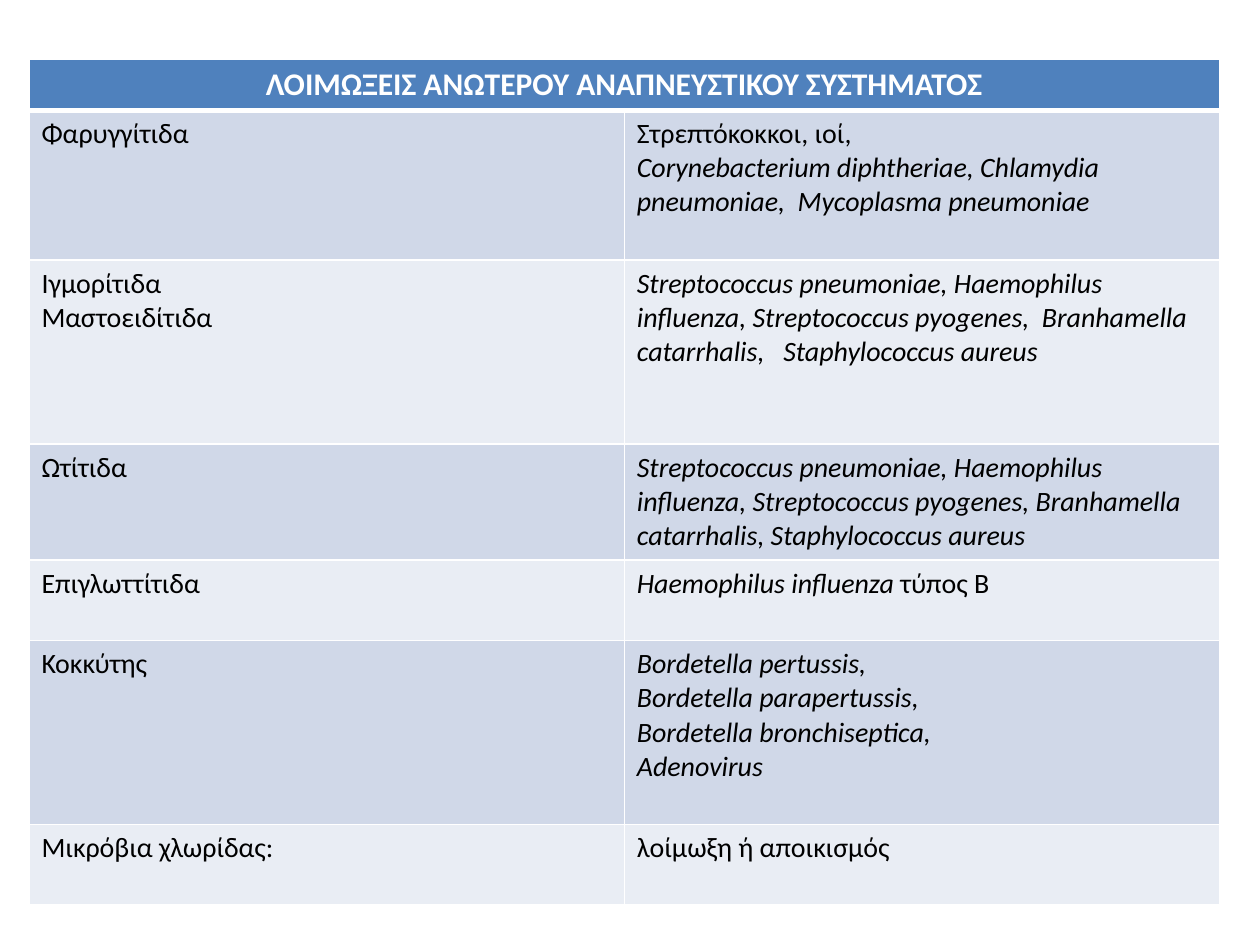
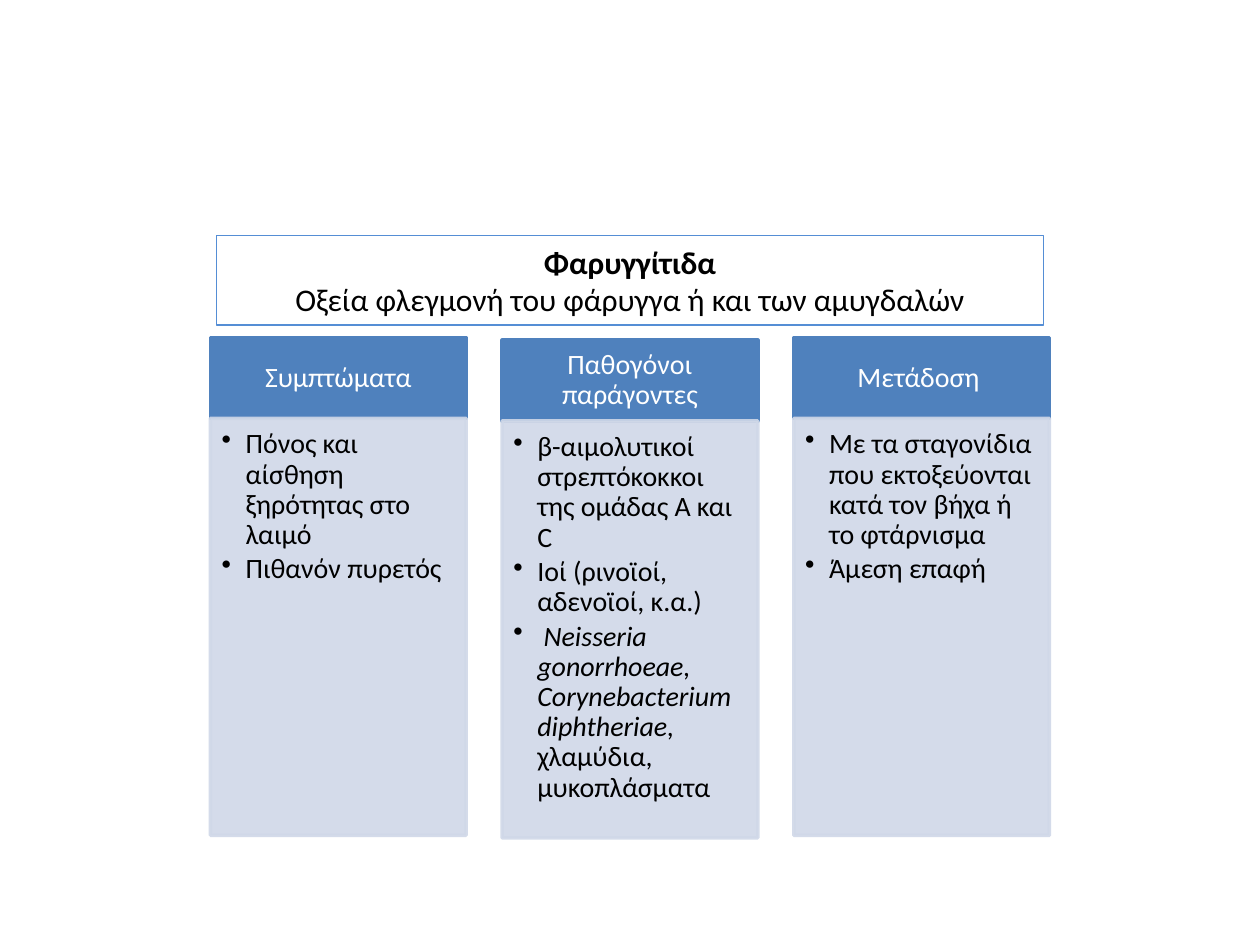
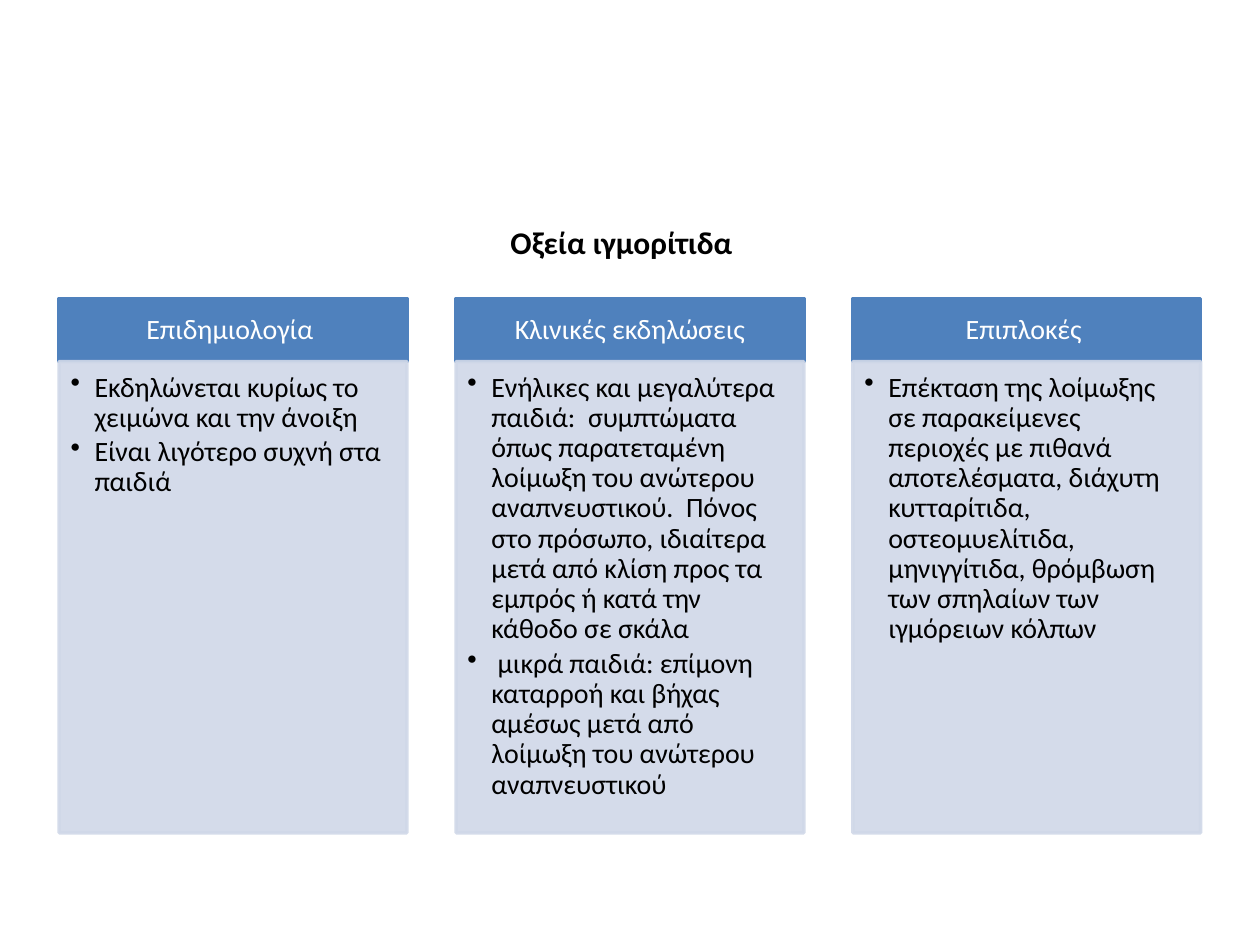
import pptx
import pptx.dml.color
import pptx.enum.shapes
import pptx.enum.text
import pptx.oxml
import pptx.oxml.ns
import pptx.util
from lxml import etree

Inches, Pt = pptx.util.Inches, pptx.util.Pt
RGBColor = pptx.dml.color.RGBColor
RECTANGLE = pptx.enum.shapes.MSO_SHAPE.RECTANGLE
Align, Anchor = pptx.enum.text.PP_ALIGN, pptx.enum.text.MSO_ANCHOR
qn = pptx.oxml.ns.qn

BLUE = RGBColor(0x4F, 0x81, 0xBD)
OUTLINE = RGBColor(0x55, 0x8E, 0xD5)
PALE = RGBColor(0xD0, 0xD8, 0xE8)
PALER = RGBColor(0xE9, 0xED, 0xF4)
WHITE = RGBColor(0xFF, 0xFF, 0xFF)
BLACK = RGBColor(0, 0, 0)
FONT = "Calibri"
TITLE_SIZE, BODY_SIZE = 18, 16


def write(frame, text, size=BODY_SIZE, color=BLACK, bold_lines=0, align=Align.LEFT,
          spacing=None, after=None, bullets=False):
    """Write one paragraph per line; asterisks enclose italics."""
    frame.word_wrap = True
    for index, line in enumerate(text.split("\n")):
        para = frame.add_paragraph() if index else frame.paragraphs[0]
        para.alignment = align
        if spacing:
            para.line_spacing = spacing
        if after:
            para.space_after = Pt(after)
        if bullets:
            properties = para._p.get_or_add_pPr()
            properties.set("marL", str(Inches(0.19)))
            properties.set("indent", str(-Inches(0.19)))
            etree.SubElement(properties, qn("a:buChar")).set("char", "•")
        for part, words in enumerate(line.split("*")):
            if words:
                span = para.add_run()
                span.text = words
                span.font.name = FONT
                span.font.size = Pt(size)
                span.font.color.rgb = color
                span.font.bold = index < bold_lines
                span.font.italic = part % 2 == 1


def add_box(page, left, top, width, height, fill, line, line_width, opacity=100):
    """Add a flat rectangle, optionally translucent."""
    box = page.shapes.add_shape(RECTANGLE, Inches(left), Inches(top),
                                Inches(width), Inches(height))
    box.shadow.inherit = False
    if fill is None:
        box.fill.background()
    else:
        box.fill.solid()
        box.fill.fore_color.rgb = fill
    box.line.color.rgb = line
    box.line.width = Pt(line_width)
    box.text_frame.vertical_anchor = Anchor.MIDDLE
    if opacity < 100:
        for color in box._element.spPr.iter(qn("a:srgbClr")):
            etree.SubElement(color, qn("a:alpha")).set("val", str(opacity * 1000))
    return box


deck = pptx.Presentation()
deck.slide_width, deck.slide_height = Inches(10), Inches(7.5)
table_page, pharyngitis_page, sinusitis_page = [
    deck.slides.add_slide(deck.slide_layouts[6]) for _ in range(3)]

# Slide 1: table of infections, with row height, disease and pathogens
infections = [
    (0.4, "ΛΟΙΜΩΞΕΙΣ ΑΝΩΤΕΡΟΥ ΑΝΑΠΝΕΥΣΤΙΚΟΥ ΣΥΣΤΗΜΑΤΟΣ", ""),
    (1.19, "Φαρυγγίτιδα",
     "Στρεπτόκοκκοι, ιοί,\n*Corynebacterium diphtheriae, Chlamydia pneumoniae,  "
     "Mycoplasma pneumoniae*"),
    (1.46, "Ιγμορίτιδα\nΜαστοειδίτιδα",
     "*Streptococcus pneumoniae, Haemophilus influenza, Streptococcus pyogenes,  "
     "Branhamella catarrhalis,   Staphylococcus aureus*"),
    (0.92, "Ωτίτιδα",
     "*Streptococcus pneumoniae, Haemophilus influenza, Streptococcus pyogenes, "
     "Branhamella catarrhalis, Staphylococcus aureus*"),
    (0.64, "Επιγλωττίτιδα", "*Haemophilus influenza *τύπος Β"),
    (1.46, "Κοκκύτης",
     "*Bordetella pertussis,*\n*Bordetella parapertussis,*\n"
     "*Bordetella bronchiseptica,*\n*Adenovirus*"),
    (0.64, "Μικρόβια χλωρίδας:", "λοίμωξη ή αποικισμός"),
]
table = table_page.shapes.add_table(
    len(infections), 2, Inches(0.23), Inches(0.47), Inches(9.45),
    Inches(sum(height for height, *_ in infections))).table
table.cell(0, 0).merge(table.cell(0, 1))
for row, (height, *texts) in enumerate(infections):
    table.rows[row].height = Inches(height)
    for column, text in enumerate(texts):
        cell = table.cell(row, column)
        cell.fill.solid()
        if row == 0:
            cell.fill.fore_color.rgb = BLUE
            write(cell.text_frame, text, size=TITLE_SIZE, color=WHITE, bold_lines=1,
                  align=Align.CENTER)
        else:
            cell.fill.fore_color.rgb = PALE if row % 2 else PALER
            write(cell.text_frame, text)
        # White borders, thicker below the heading
        for position, side in enumerate("LRTB"):
            thick = (row, side) in [(0, "B"), (1, "T")]
            border = pptx.oxml.parse_xml(
                f'<a:ln{side} {pptx.oxml.ns.nsdecls("a")} w="{Pt(3 if thick else 1)}">'
                f'<a:solidFill><a:srgbClr val="{WHITE}"/></a:solidFill></a:ln{side}>')
            cell._tc.get_or_add_tcPr().insert(position, border)

# Slide 2: title box
title_box = add_box(pharyngitis_page, 1.72, 1.87, 6.56, 0.71, None, OUTLINE, 0.75)
write(title_box.text_frame, "Φαρυγγίτιδα\nΟξεία φλεγμονή του φάρυγγα ή και των αμυγδαλών",
      size=TITLE_SIZE, bold_lines=1, align=Align.CENTER)

# Slide 3: title
title_box = sinusitis_page.shapes.add_textbox(
    Inches(3.2), Inches(1.72), Inches(3.52), Inches(0.4))
write(title_box.text_frame, "Οξεία ιγμορίτιδα ", size=TITLE_SIZE, bold_lines=1,
      align=Align.CENTER)

# Slides 2 and 3: three columns, each a heading above a bulleted panel
pharyngitis = [
    ("Συμπτώματα", "Πόνος και αίσθηση ξηρότητας στο λαιμό\nΠιθανόν πυρετός"),
    ("Παθογόνοι παράγοντες",
     "β-αιμολυτικοί  στρεπτόκοκκοι της ομάδας A και C\n"
     "Ιοί (ρινοϊοί, αδενοϊοί, κ.α.)\n"
     " *Neisseria gonorrhoeae, Corynebacterium diphtheriae, *χλαμύδια, μυκοπλάσματα"),
    ("Μετάδοση ",
     "Με τα σταγονίδια που εκτοξεύονται κατά τον βήχα ή το φτάρνισμα\nΆμεση επαφή"),
]
sinusitis = [
    ("Επιδημιολογία ",
     "Εκδηλώνεται κυρίως το χειμώνα και την άνοιξη\nΕίναι λιγότερο συχνή στα παιδιά"),
    ("Κλινικές εκδηλώσεις",
     "Ενήλικες και μεγαλύτερα παιδιά:  συμπτώματα όπως παρατεταμένη λοίμωξη του "
     "ανώτερου αναπνευστικού.  Πόνος στο πρόσωπο, ιδιαίτερα μετά από κλίση προς τα "
     "εμπρός ή κατά την κάθοδο σε σκάλα\n"
     " μικρά παιδιά: επίμονη καταρροή και βήχας αμέσως μετά από λοίμωξη του ανώτερου "
     "αναπνευστικού"),
    ("Επιπλοκές ",
     "Επέκταση της λοίμωξης σε παρακείμενες περιοχές με πιθανά αποτελέσματα, διάχυτη "
     "κυτταρίτιδα, οστεομυελίτιδα, μηνιγγίτιδα, θρόμβωση των σπηλαίων των ιγμόρειων "
     "κόλπων"),
]
# Page, columns, left, pitch, width, top, middle column drop, heading and panel heights
column_sets = [
    (pharyngitis_page, pharyngitis, 1.67, 2.315, 2.03, 2.68, 0.02, 0.64, 3.31),
    (sinusitis_page, sinusitis, 0.47, 3.15, 2.76, 2.37, 0, 0.5, 3.74),
]
for page, columns, left, pitch, width, top, drop, head_height, panel_height in column_sets:
    for index, (heading, points) in enumerate(columns):
        x = left + index * pitch
        y = top + (drop if index == 1 else 0)
        head = add_box(page, x, y, width, head_height, BLUE, BLUE, 2)
        panel = add_box(page, x, y + head_height, width, panel_height, PALE, PALE, 2,
                        opacity=90)
        panel.text_frame.vertical_anchor = Anchor.TOP
        for box, margins in [(head, (0.12, 0.07, 0.12, 0.07)),
                             (panel, (0.09, 0.09, 0.12, 0.14))]:
            frame = box.text_frame
            (frame.margin_left, frame.margin_top, frame.margin_right,
             frame.margin_bottom) = map(Inches, margins)
        write(head.text_frame, heading, color=WHITE, align=Align.CENTER, spacing=0.9)
        write(panel.text_frame, points, spacing=0.9, after=2.4, bullets=True)

deck.save("out.pptx")
